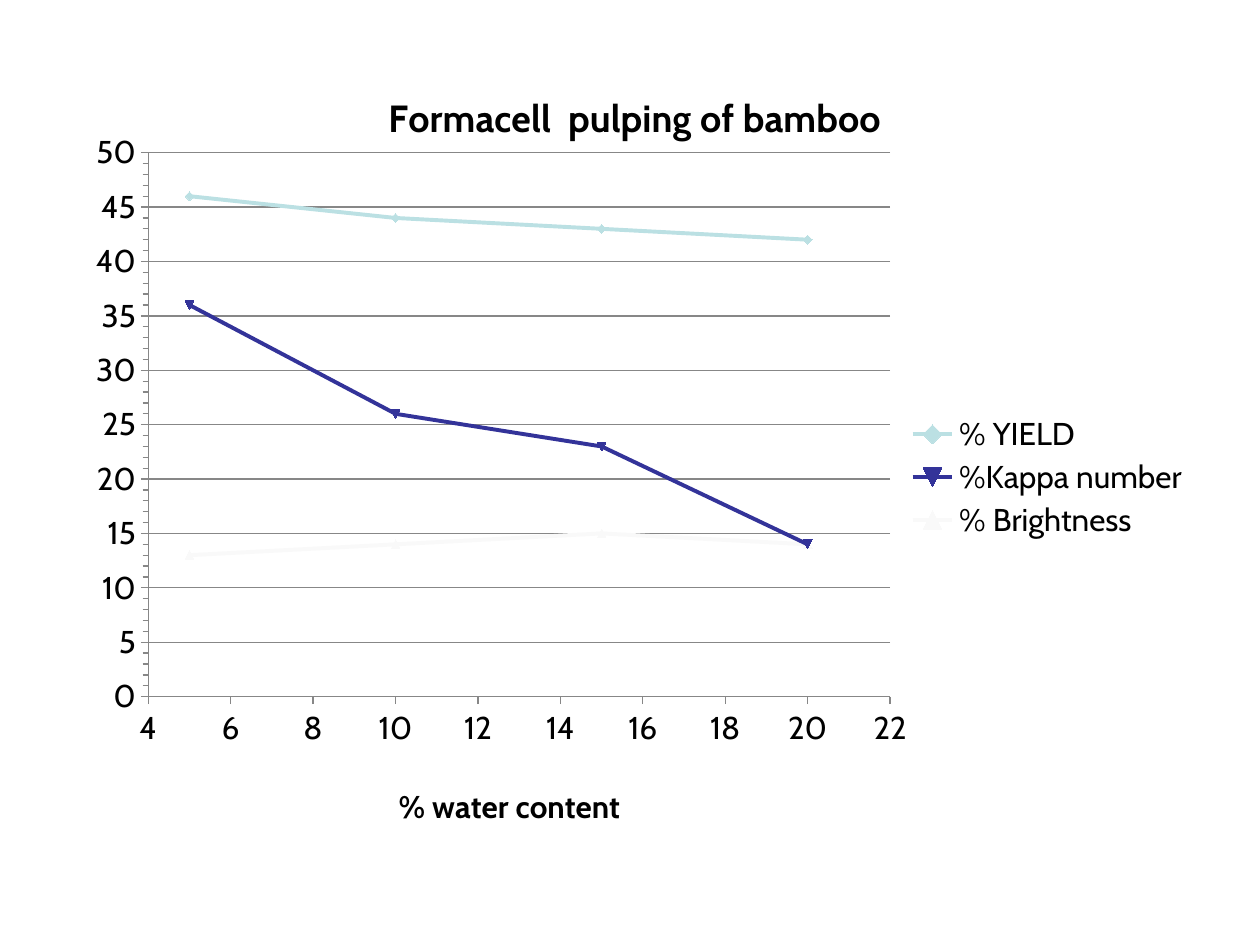
import pptx
import pptx.chart.data
import pptx.dml.color
import pptx.enum.chart
import pptx.oxml
import pptx.util

EMU_PER_PX = 914400 // 126
FONT = "Cabin"
BLACK = pptx.dml.color.RGBColor(0x00, 0x00, 0x00)
GRAY = pptx.dml.color.RGBColor(0x87, 0x87, 0x87)
PALE_TEAL = pptx.dml.color.RGBColor(0xBB, 0xE0, 0xE3)
INDIGO = pptx.dml.color.RGBColor(0x33, 0x33, 0x99)
OFF_WHITE = pptx.dml.color.RGBColor(0xF9, 0xF9, 0xF9)

MARKER = pptx.enum.chart.XL_MARKER_STYLE
TICK = pptx.enum.chart.XL_TICK_MARK
WATER_CONTENT = (5, 10, 15, 20)
SERIES = (
    ("% YIELD", (46, 44, 43, 42), PALE_TEAL, MARKER.DIAMOND),
    ("%Kappa number", (36, 26, 23, 14), INDIGO, MARKER.AUTOMATIC),
    ("% Brightness", (13, 14, 15, 14), OFF_WHITE, MARKER.TRIANGLE),
)


def px(length):
    return pptx.util.Emu(length * EMU_PER_PX)


def format_font(font, size=18, bold=False, color=BLACK):
    font.name = FONT
    font.size = pptx.util.Pt(size)
    font.bold = bold
    font.color.rgb = color


def set_text(text_frame, text, **font_format):
    paragraph = text_frame.paragraphs[0]
    run = paragraph.add_run()
    run.text = text
    format_font(run.font, **font_format)


def place(element, followers, inner=False, **fractions):
    """Give a chart part a manual layout, in fractions of the chart's size."""
    for old in element.findall(pptx.oxml.ns.qn("c:layout")):
        element.remove(old)
    target = '<c:layoutTarget val="inner"/>' if inner else ""
    modes = '<c:xMode val="edge"/><c:yMode val="edge"/>'
    values = "".join(f'<c:{key} val="{value}"/>' for key, value in fractions.items())
    layout = pptx.oxml.parse_xml(
        f'<c:layout {pptx.oxml.ns.nsdecls("c")}><c:manualLayout>'
        f"{target}{modes}{values}</c:manualLayout></c:layout>"
    )
    element.insert_element_before(layout, *followers)


def add_title(owner, text, size, x, y):
    """Title a chart or an axis."""
    owner.has_title = True
    title = owner.chart_title if hasattr(owner, "chart_title") else owner.axis_title
    set_text(title.text_frame, text, size=size, bold=True)
    place(title._element, ("c:overlay", "c:spPr", "c:txPr"), x=x, y=y)


def format_line(line, color, width):
    line.color.rgb = color
    line.width = pptx.util.Pt(width)


def format_axis(axis, minimum, maximum, step, gridlines):
    axis.minimum_scale = minimum
    axis.maximum_scale = maximum
    axis.major_unit = step
    axis.major_tick_mark = TICK.OUTSIDE
    axis.minor_tick_mark = TICK.NONE
    axis.has_major_gridlines = gridlines
    if gridlines:
        format_line(axis.major_gridlines.format.line, GRAY, 0.75)
    format_line(axis.format.line, GRAY, 0.75)
    format_font(axis.tick_labels.font)
    axis.tick_labels.number_format = "General"
    axis.tick_labels.number_format_is_linked = False


def format_series(series, color, marker_style):
    series.smooth = False
    format_line(series.format.line, color, 2.25)
    marker = series.marker
    marker.style = marker_style
    marker.size = 5
    marker.format.fill.solid()
    marker.format.fill.fore_color.rgb = color
    marker.format.line.color.rgb = color


def add_pulping_chart(slide):
    data = pptx.chart.data.XyChartData()
    for name, values, _, _ in SERIES:
        series_data = data.add_series(name)
        for water, value in zip(WATER_CONTENT, values):
            series_data.add_data_point(water, value)
    chart = slide.shapes.add_chart(
        pptx.enum.chart.XL_CHART_TYPE.XY_SCATTER_LINES,
        px(63), px(59), px(1138), px(837), data,
    ).chart
    format_font(chart.font)
    plot = chart.plots[0]
    plot.vary_by_categories = False
    for series, (_, _, color, marker_style) in zip(plot.series, SERIES):
        format_series(series, color, marker_style)

    format_axis(chart.category_axis, 4, 22, 2, gridlines=False)
    format_axis(chart.value_axis, 0, 50, 5, gridlines=True)
    chart.value_axis.minor_unit = 1
    chart.value_axis.minor_tick_mark = TICK.OUTSIDE
    add_title(chart, "Formacell  pulping of bamboo", 21.6, x=0.28, y=0.03)
    add_title(chart.category_axis, "% water content", 18, x=0.29, y=0.86)

    chart.has_legend = True
    legend = chart.legend
    legend.position = pptx.enum.chart.XL_LEGEND_POSITION.RIGHT
    legend.include_in_layout = False
    format_font(legend.font)
    place(legend._element, ("c:overlay", "c:spPr", "c:txPr"),
          x=0.74, y=0.42, w=0.25, h=0.16)
    plot_area = chart._chartSpace.chart.plotArea
    place(plot_area, ("c:scatterChart",), inner=True,
          x=0.075, y=0.112, w=0.652, h=0.65)


def main():
    presentation = pptx.Presentation()
    presentation.slide_width = px(1260)
    presentation.slide_height = px(945)
    slide = presentation.slides.add_slide(presentation.slide_layouts[6])
    add_pulping_chart(slide)
    presentation.save("out.pptx")


if __name__ == "__main__":
    main()
